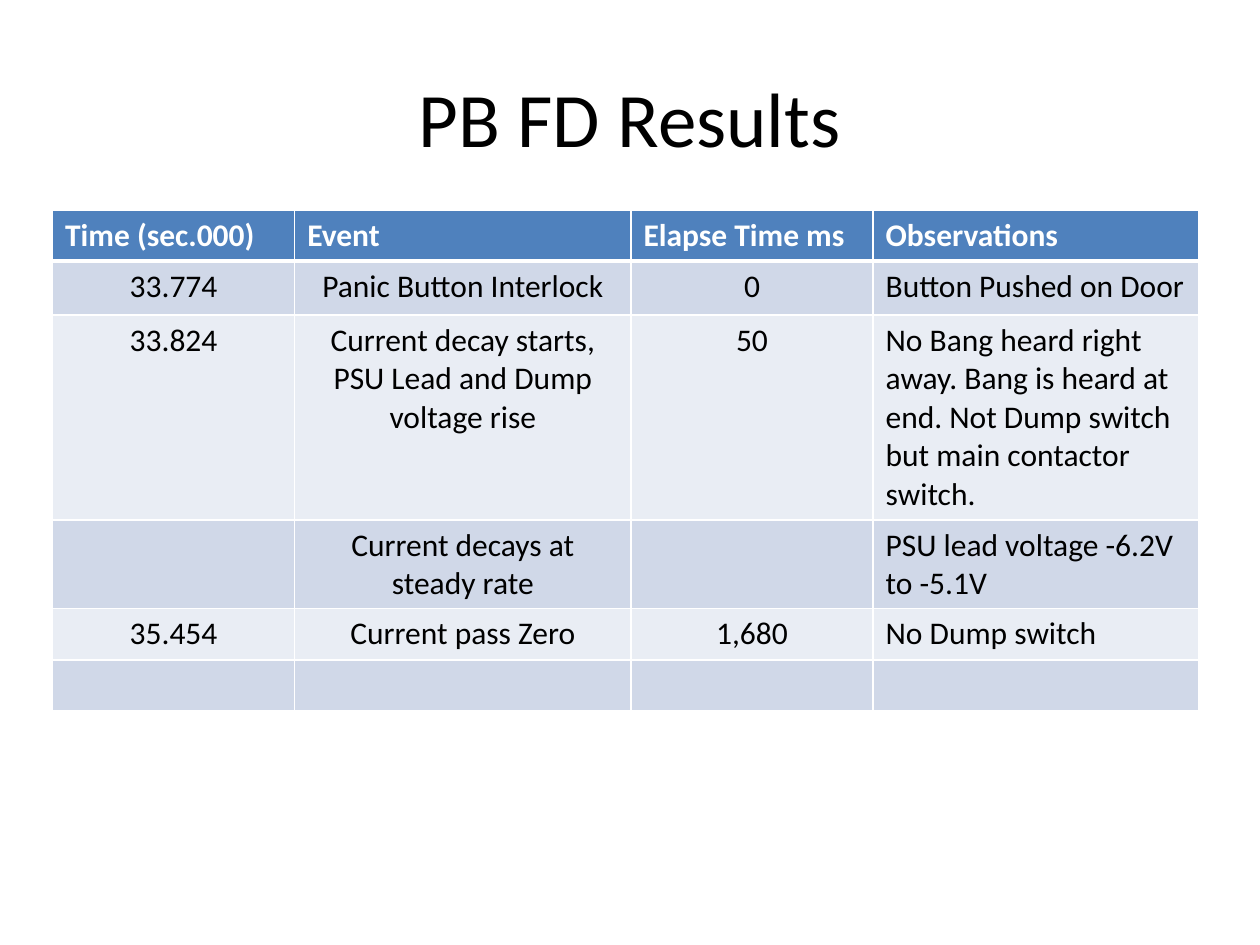
from dataclasses import dataclass

from lxml import etree
from pptx import Presentation
from pptx.dml.color import RGBColor
from pptx.enum import text as txt
from pptx.oxml import ns
from pptx.util import Cm, Pt


@dataclass(frozen=True)
class Theme:
    font: str = "Calibri"
    title_size: int = 44
    body_size: int = 18
    ink: str = "000000"
    header_ink: str = "FFFFFF"
    header_fill: str = "4F81BD"
    bands: tuple = ("D0D8E8", "E9EDF4")
    rule: str = "FFFFFF"
    thin: int = 1
    thick: int = 3


THEME = Theme()

HEADINGS = ["Time (sec.000)", "Event", "Elapse Time ms", "Observations"]
EVENTS = [
    ["33.774", "Panic Button Interlock", "0", "Button Pushed on Door"],
    ["33.824", "Current decay starts,\nPSU Lead and Dump voltage rise", "50",
     "No Bang heard right away. Bang is heard at end. "
     "Not Dump switch but main contactor switch."],
    ["", "Current decays at steady rate", "", "PSU lead voltage -6.2V to -5.1V"],
    ["35.454", "Current pass Zero", "1,680", "No Dump switch"],
    ["", "", "", ""],
]
COLUMN_WIDTHS = [4.88, 6.78, 4.88, 6.56]
ROW_HEIGHTS = [1.03, 1.09, 4.13, 1.79, 1.03, 1.03]


def write(frame, words, size, color, align, bold=False):
    frame.text = words
    for paragraph in frame.paragraphs:
        paragraph.alignment = align
        for run in paragraph.runs:
            run.font.name = THEME.font
            run.font.size = Pt(size)
            run.font.bold = bold
            run.font.color.rgb = RGBColor.from_string(color)


def rule_cell(cell, top, bottom):
    """Draw the four borders; must come before the cell's fill."""
    properties = cell._tc.get_or_add_tcPr()
    widths = {"L": THEME.thin, "R": THEME.thin, "T": top, "B": bottom}
    for side, width in widths.items():
        line = etree.SubElement(properties, ns.qn(f"a:ln{side}"), w=str(Pt(width)))
        fill = etree.SubElement(line, ns.qn("a:solidFill"))
        etree.SubElement(fill, ns.qn("a:srgbClr"), val=THEME.rule)


def add_title(slide, left, top, width, height):
    box = slide.shapes.add_textbox(Cm(left), Cm(top), Cm(width), Cm(height))
    frame = box.text_frame
    frame.word_wrap = True
    frame.vertical_anchor = txt.MSO_ANCHOR.MIDDLE
    write(frame, "PB FD Results", THEME.title_size, THEME.ink, txt.PP_ALIGN.CENTER)


def add_results(slide, left, top):
    rows = [HEADINGS] + EVENTS
    results = slide.shapes.add_table(
        len(rows), len(HEADINGS), Cm(left), Cm(top),
        Cm(sum(COLUMN_WIDTHS)), Cm(sum(ROW_HEIGHTS))).table
    for column, width in zip(results.columns, COLUMN_WIDTHS):
        column.width = Cm(width)
    for row, height in zip(results.rows, ROW_HEIGHTS):
        row.height = Cm(height)

    for r, entries in enumerate(rows):
        is_header = r == 0
        band = THEME.header_fill if is_header else THEME.bands[(r - 1) % 2]
        for c, words in enumerate(entries):
            cell = results.cell(r, c)
            # The heavy rule lies between the header and the first event
            rule_cell(cell, THEME.thick if r == 1 else THEME.thin,
                      THEME.thick if is_header else THEME.thin)
            cell.fill.solid()
            cell.fill.fore_color.rgb = RGBColor.from_string(band)
            # Headings and observations read from the left
            at_left = is_header or c == len(HEADINGS) - 1
            write(cell.text_frame, words, THEME.body_size,
                  THEME.header_ink if is_header else THEME.ink,
                  txt.PP_ALIGN.LEFT if at_left else txt.PP_ALIGN.CENTER,
                  bold=is_header)


def main():
    deck = Presentation()
    deck.slide_width, deck.slide_height = Cm(25.4), Cm(19.05)
    slide = deck.slides.add_slide(deck.slide_layouts[6])
    add_title(slide, 1.27, 0.76, 22.86, 3.18)
    add_results(slide, 1.06, 4.23)
    deck.save("out.pptx")


if __name__ == "__main__":
    main()
